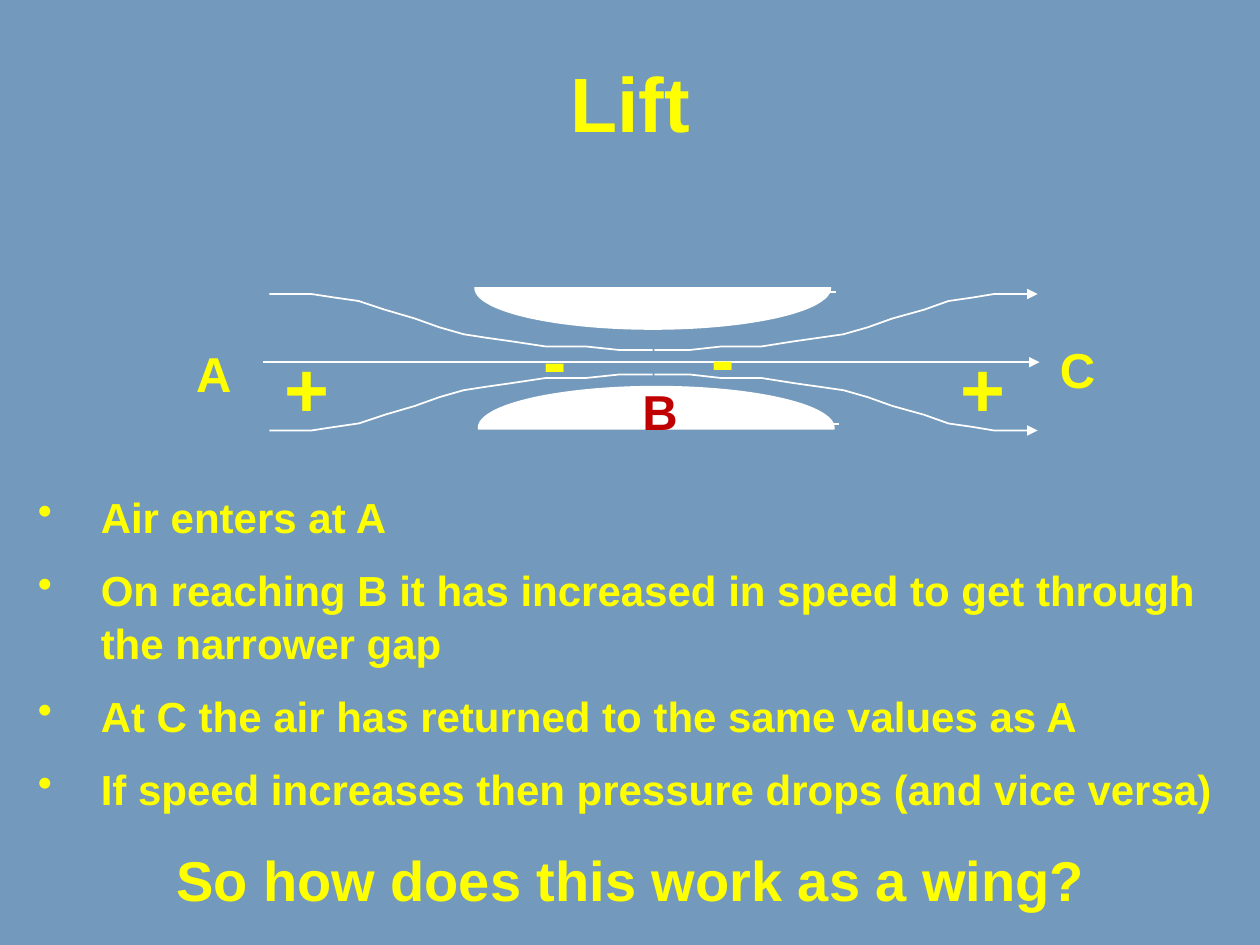
from pptx import Presentation
from pptx.dml.color import RGBColor
from pptx.enum.shapes import MSO_CONNECTOR, MSO_SHAPE
from pptx.enum.text import MSO_ANCHOR, PP_ALIGN
from pptx.oxml.ns import qn
from pptx.util import Pt
from lxml import etree

OVAL, RECT = MSO_SHAPE.OVAL, MSO_SHAPE.RECTANGLE
STRAIGHT = MSO_CONNECTOR.STRAIGHT
CENTER, LEFT = PP_ALIGN.CENTER, PP_ALIGN.LEFT
TOP, MIDDLE = MSO_ANCHOR.TOP, MSO_ANCHOR.MIDDLE

THEME = {
    "font": "Arial",
    "sky": RGBColor(0x73, 0x9A, 0xBC),
    "white": RGBColor(0xFF, 0xFF, 0xFF),
    "yellow": RGBColor(0xFF, 0xFF, 0x00),
    "red": RGBColor(0xC0, 0x00, 0x00),
    "title": 44, "plus": 44, "minus": 40, "label": 28, "body": 24, "question": 32,
}


def write(p, text, size, color="yellow", align=LEFT, spacing=1.05):
    """Fill paragraph p with one bold run."""
    p.alignment, p.line_spacing = align, spacing
    r = p.add_run()
    r.text = text
    font = {"name": THEME["font"], "size": Pt(THEME[size]), "bold": True}
    for key, value in font.items():
        setattr(r.font, key, value)
    r.font.color.rgb = THEME[color]


def style_line(shape, arrow=None):
    """Thin white line without shadow; arrow is headEnd or tailEnd."""
    shape.line.color.rgb = THEME["white"]
    shape.line.width = Pt(1)
    sp_pr = shape._element.spPr
    if arrow:
        etree.SubElement(shape.line._get_or_add_ln(), qn("a:" + arrow), type="triangle")
    if sp_pr.find(qn("a:effectLst")) is None:
        etree.SubElement(sp_pr, qn("a:effectLst"))


prs = Presentation()
prs.slide_width, prs.slide_height = Pt(720), Pt(540)
s = prs.slides.add_slide(prs.slide_layouts[5])
s.background.fill.solid()
s.background.fill.fore_color.rgb = THEME["sky"]

# Title
title = s.shapes.title
place = {"left": Pt(0), "top": Pt(34), "width": Pt(720), "height": Pt(55)}
for key, value in place.items():
    setattr(title, key, value)
title.text_frame.vertical_anchor = MIDDLE
write(title.text_frame.paragraphs[0], "Lift", "title", align=CENTER, spacing=0.9)

# Half ellipses: each oval is cut flat by a sky-coloured rectangle
walls = [  # oval left, oval top, cover top, edge line y
    (273.5, 221, 245.5, 242.5),
    (271.5, 141, 134, 167),
]
for x, y, cover_y, edge_y in walls:
    oval = s.shapes.add_shape(OVAL, Pt(x), Pt(y), Pt(203), Pt(47))
    cover = s.shapes.add_shape(RECT, Pt(x - 19), Pt(cover_y), Pt(240), Pt(30))
    for shape, color in ((oval, "white"), (cover, "sky")):
        shape.shadow.inherit = False
        shape.fill.solid()
        shape.fill.fore_color.rgb = THEME[color]
        shape.line.fill.background()
    style_line(oval)
    style_line(s.shapes.add_connector(
        STRAIGHT, Pt(x + 2), Pt(edge_y), Pt(x + 206), Pt(edge_y)))

# Streamlines: one quarter curve, mirrored across both axes
axis_x, axis_y = 373.5, 207
curve = [(154, 168), (178.5, 168), (191, 170), (205, 172), (219.5, 177),
         (237, 182), (251, 187), (265, 191), (278.5, 193), (292.5, 195),
         (312, 197.5), (335, 198.5), (353.5, 199.5), (373, 199.5)]
style_line(s.shapes.add_connector(
    STRAIGHT, Pt(150.5), Pt(axis_y), Pt(594), Pt(axis_y)), "tailEnd")
for flip_y in (False, True):
    for flip_x in (False, True):
        points = [(2 * axis_x - x if flip_x else x, 2 * axis_y - y if flip_y else y)
                  for x, y in curve]
        builder = s.shapes.build_freeform(*points[0], scale=Pt(1))
        builder.add_line_segments(points[1:], close=False)
        stream = builder.convert_to_shape()
        stream.shadow.inherit = False
        stream.fill.background()
        style_line(stream, "headEnd" if flip_x else None)

# Point labels and pressure signs
labels = [  # text, left, top, width, height, size, colour, line spacing
    ("A", 105, 191, 57, 41, "label", "yellow", 1.05),
    ("B", 360, 213, 51, 41, "label", "red", 1.05),
    ("C", 598.5, 189, 51, 41, "label", "yellow", 1.05),
    ("+", 155.5, 191, 40, 60, "plus", "yellow", 1.0),
    ("+", 541.5, 191, 40, 60, "plus", "yellow", 1.0),
    ("-", 303.5, 175, 34, 55, "minus", "yellow", 1.05),
    ("-", 399.5, 174, 34, 55, "minus", "yellow", 1.05),
]
for text, x, y, w, h, size, color, spacing in labels:
    tf = s.shapes.add_textbox(Pt(x), Pt(y), Pt(w), Pt(h)).text_frame
    tf.word_wrap = True
    write(tf.paragraphs[0], text, size, color, spacing=spacing)

# Explanation
bullets = [
    "Air enters at A",
    "On reaching B it has increased in speed to get through the narrower gap",
    "At C the air has returned to the same values as A",
    "If speed increases then pressure drops (and vice versa)",
]
tf = s.shapes.add_textbox(Pt(14.5), Pt(276), Pt(692), Pt(254)).text_frame
tf.word_wrap = True
tf.vertical_anchor = TOP
for i, text in enumerate(bullets):
    p = tf.add_paragraph() if i else tf.paragraphs[0]
    pPr = p._p.get_or_add_pPr()
    pPr.set("marL", str(Pt(36)))
    pPr.set("indent", str(Pt(-36)))
    etree.SubElement(pPr, qn("a:buChar"), char="•")
    if i:
        p.space_before = Pt(11.5)
    write(p, text, "body")
p = tf.add_paragraph()
p.space_before = Pt(16)
write(p, "So how does this work as a wing?", "question", align=CENTER)

prs.save("out.pptx")
